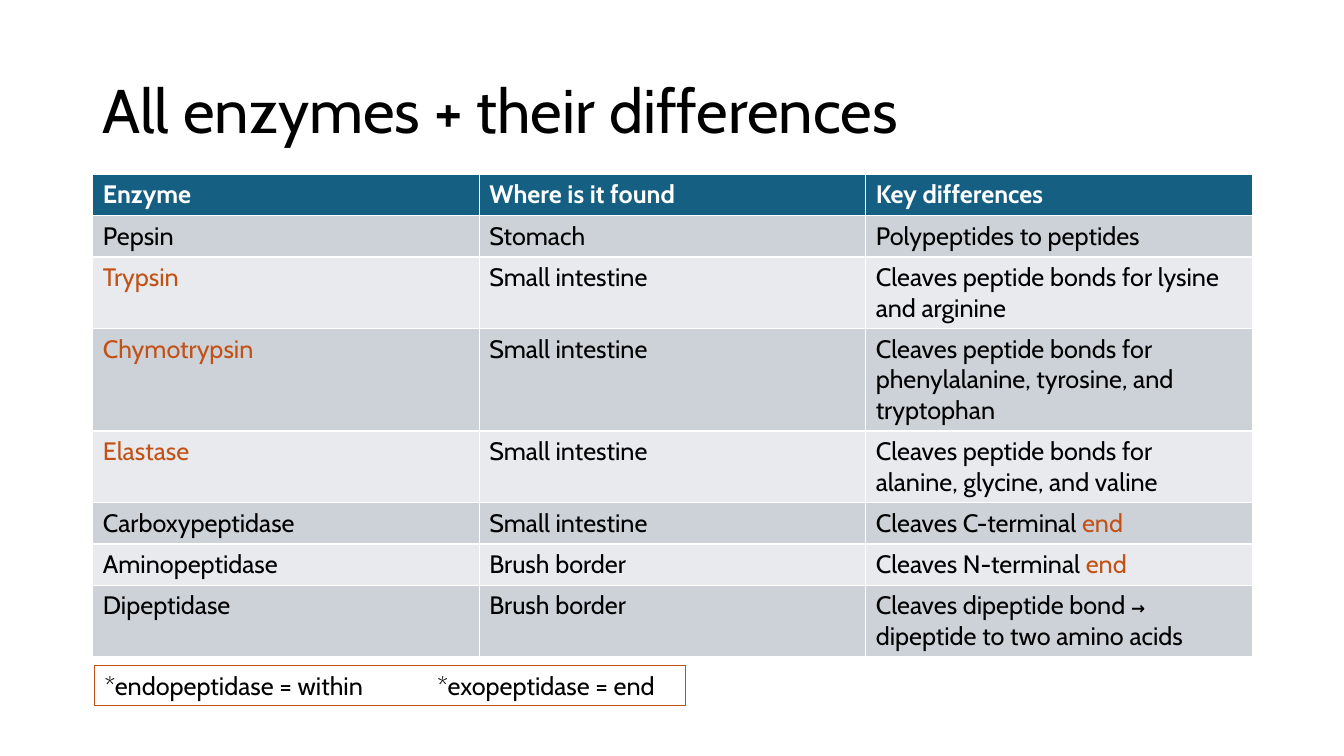
from lxml.etree import SubElement
from pptx import Presentation
from pptx.dml.color import RGBColor
from pptx.enum.shapes import MSO_SHAPE
from pptx.enum.text import MSO_ANCHOR, MSO_AUTO_SIZE, PP_ALIGN
from pptx.oxml.ns import qn
from pptx.util import Inches, Pt

FONT = "Cabin"
HUES = {"ink": "000000", "paper": "FFFFFF", "head": "156082",
        "dark": "CCD2D8", "light": "E8EAED", "mark": "C25115", "edge": "C04F15"}
LEFT, WIDE = 0.92, 11.5
ROW = 0.41

# A cell is a string, or a list of (text, style) runs
MARK = {"hue": "mark"}
HEADS = ["Enzyme", "Where is it found", "Key differences"]
ROWS = [
    ["Pepsin", "Stomach", "Polypeptides to peptides"],
    [[("Trypsin", MARK)], "Small intestine",
     "Cleaves peptide bonds for lysine and arginine"],
    [[("Chymotrypsin", MARK)], "Small intestine",
     "Cleaves peptide bonds for phenylalanine, tyrosine, and tryptophan"],
    [[("Elastase", MARK)], "Small intestine",
     "Cleaves peptide bonds for  alanine, glycine, and valine"],
    ["Carboxypeptidase", "Small intestine",
     [("Cleaves C-terminal ", {}), ("end", MARK)]],
    ["Aminopeptidase", "Brush border",
     [("Cleaves N-terminal ", {}), ("end", MARK)]],
    ["Dipeptidase", "Brush border",
     [("Cleaves dipeptide bond ", {}), ("→", {"size": 12, "bold": True}),
      (" dipeptide to two amino acids", {})]],
]


def tint(name):
    return RGBColor.from_string(HUES[name])


def add_run(para, text, size=18, hue="ink", bold=False):
    run = para.add_run()
    run.text = text
    font = run.font
    font.name, font.size, font.bold = FONT, Pt(size), bold
    font.color.rgb = tint(hue)


def add_title(slide, text):
    title = slide.shapes.title
    title.left, title.top = Inches(LEFT), Inches(0.4)
    title.width, title.height = Inches(WIDE), Inches(1.45)
    frame = title.text_frame
    frame.auto_size = MSO_AUTO_SIZE.NONE
    frame.vertical_anchor = MSO_ANCHOR.MIDDLE
    para = frame.paragraphs[0]
    para.alignment, para.line_spacing = PP_ALIGN.LEFT, 0.9
    add_run(para, text, 44)


def fill_cell(cell, runs, fill):
    cell.fill.solid()
    cell.fill.fore_color.rgb = tint(fill)
    for text, style in runs:
        add_run(cell.text_frame.paragraphs[0], text, **style)


def add_grid(slide):
    count = len(ROWS) + 1
    table = slide.shapes.add_table(
        count, len(HEADS), Inches(LEFT), Inches(1.73),
        Inches(WIDE), Inches(ROW * count)).table
    for col, text in enumerate(HEADS):
        fill_cell(table.cell(0, col), [(text, {"hue": "paper", "bold": True})], "head")
    for row, items in enumerate(ROWS, 1):
        fill = "dark" if row % 2 else "light"
        for col, item in enumerate(items):
            runs = [(item, {})] if isinstance(item, str) else item
            fill_cell(table.cell(row, col), runs, fill)


def add_key(slide, terms, stop):
    box = slide.shapes.add_shape(MSO_SHAPE.RECTANGLE, Inches(0.94), Inches(6.6),
                                 Inches(5.86), Inches(0.4))
    box.shadow.inherit = False
    box.fill.background()
    box.line.color.rgb = tint("edge")
    box.line.width = Pt(0.75)
    frame = box.text_frame
    frame.word_wrap = True
    frame.vertical_anchor = MSO_ANCHOR.TOP
    para = frame.paragraphs[0]
    para.alignment = PP_ALIGN.LEFT
    # One tab stop sets the second term apart
    tabs = SubElement(para._p.get_or_add_pPr(), qn("a:tabLst"))
    SubElement(tabs, qn("a:tab"), pos=str(Inches(stop)), algn="l")
    add_run(para, "\t".join(terms))


def main():
    deck = Presentation()
    deck.slide_width, deck.slide_height = Inches(13.33), Inches(7.5)
    slide = deck.slides.add_slide(deck.slide_layouts[5])
    add_title(slide, "All enzymes + their differences")
    add_grid(slide)
    add_key(slide, ["*endopeptidase = within", "*exopeptidase = end"], 3.3)
    deck.save("out.pptx")


if __name__ == "__main__":
    main()
